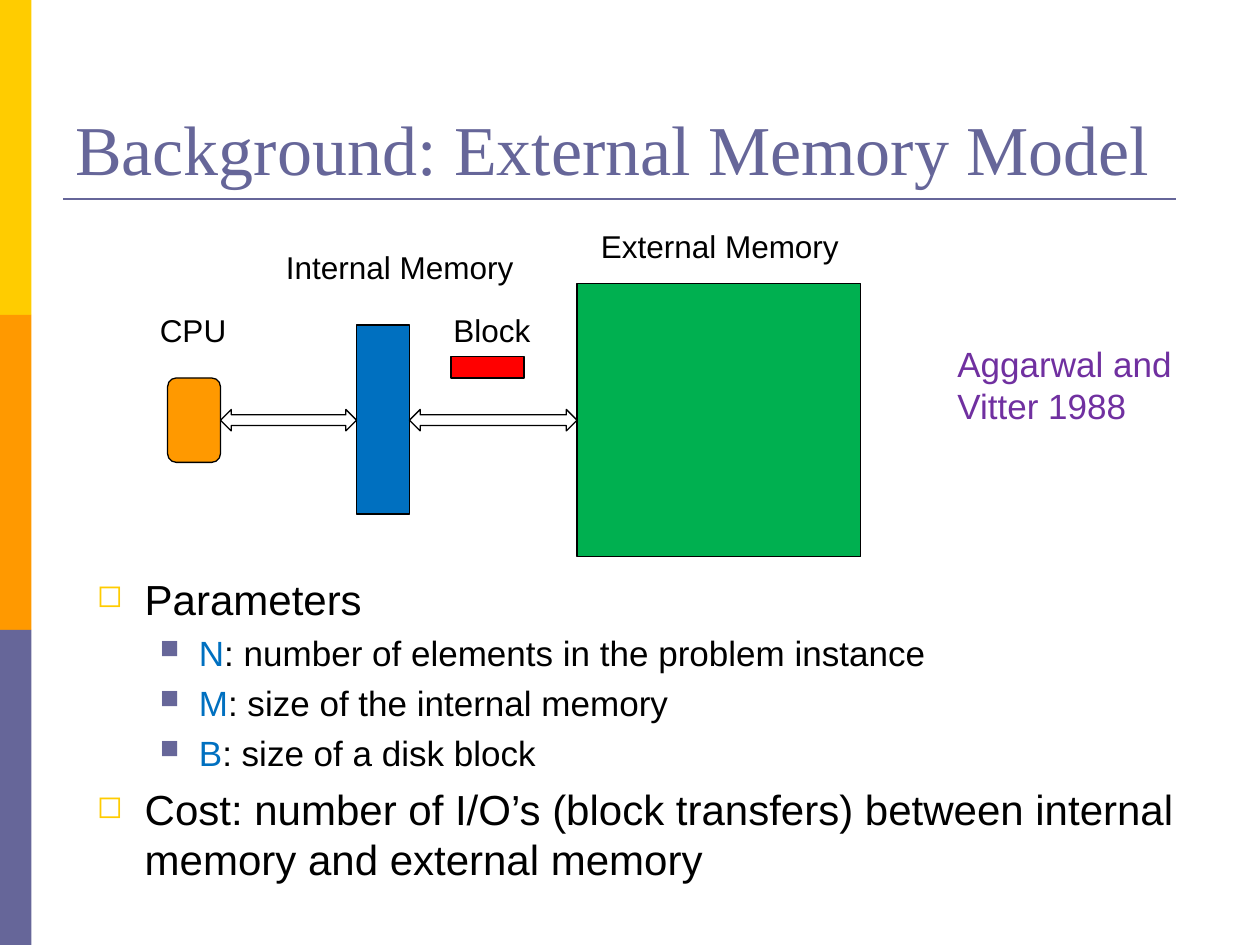
import lxml.etree
import pptx
import pptx.dml.color
import pptx.enum.shapes
import pptx.enum.text
import pptx.oxml.ns
import pptx.util

Inches = pptx.util.Inches
Pt = pptx.util.Pt
SHAPE = pptx.enum.shapes.MSO_SHAPE
ANCHOR = pptx.enum.text.MSO_ANCHOR

THEME = {
    "yellow": "FFCC00", "orange": "FF9900", "slate": "666699",
    "black": "000000", "blue": "0070C0", "green": "00B050",
    "red": "FF0000", "purple": "7030A0",
    "heading_font": "Times New Roman", "body_font": "Arial",
    "title": 40, "level_sizes": (24, 20), "citation": 20, "label": 18,
}

TITLE = "Background: External Memory Model"
SIDE_BANDS = ["yellow", "orange", "slate"]
CITATION = ["Aggarwal and", "Vitter 1988"]

# shape, colour, left, top, width, height
CPU = (SHAPE.ROUNDED_RECTANGLE, "orange", 1.33, 3, 0.42, 0.67)
INTERNAL = (SHAPE.RECTANGLE, "blue", 2.83, 2.58, 0.42, 1.5)
EXTERNAL = (SHAPE.RECTANGLE, "green", 4.58, 2.25, 2.25, 2.17)
BLOCK = (SHAPE.RECTANGLE, "red", 3.58, 2.83, 0.58, 0.17)
ARROW_TOP, ARROW_HEIGHT = 3.25, 0.17

# text, left, top, width
LABELS = [
    ("CPU", 1.17, 2.42, 0.73),
    ("Internal Memory", 2.17, 1.92, 2.03),
    ("Block", 3.5, 2.42, 0.82),
    ("External Memory", 4.67, 1.75, 2.11),
]

# level, symbol, text
BULLETS = [
    (0, "", "Parameters"),
    (1, "N", ": number of elements in the problem instance"),
    (1, "M", ": size of the internal memory"),
    (1, "B", ": size of a disk block"),
    (0, "", "Cost: number of I/O’s (block transfers) between internal "
            "memory and external memory"),
]
# bullet character, colour, left margin, hanging indent
BULLET_STYLES = [("◻", "yellow", 0.38, 0.38), ("■", "slate", 0.81, 0.31)]


def color(name):
    return pptx.dml.color.RGBColor.from_string(THEME[name])


def add_block(slide, kind, fill, left, top, width, height, outlined=True):
    shape = slide.shapes.add_shape(
        kind, Inches(left), Inches(top), Inches(width), Inches(height))
    shape.shadow.inherit = False
    if fill:
        shape.fill.solid()
        shape.fill.fore_color.rgb = color(fill)
    else:
        shape.fill.background()
    if outlined:
        shape.line.color.rgb = color("black")
        shape.line.width = Pt(0.75)
    else:
        shape.line.fill.background()


def add_text_frame(slide, left, top, width, height, wrap):
    box = slide.shapes.add_textbox(
        Inches(left), Inches(top), Inches(width), Inches(height))
    box.text_frame.word_wrap = wrap
    return box.text_frame


def style_font(font, size, font_color, name=THEME["body_font"]):
    font.size = Pt(size)
    font.name = name
    font.color.rgb = color(font_color)


def add_lines(slide, lines, left, top, width, height, size, font_color):
    frame = add_text_frame(slide, left, top, width, height, False)
    frame.auto_size = pptx.enum.text.MSO_AUTO_SIZE.SHAPE_TO_FIT_TEXT
    frame.text = "\n".join(lines)
    for paragraph in frame.paragraphs:
        style_font(paragraph.font, size, font_color)


def set_bullet(paragraph, character, bullet_color, margin, hanging):
    properties = paragraph._p.get_or_add_pPr()
    properties.set("marL", str(Inches(margin)))
    properties.set("indent", str(-Inches(hanging)))
    qn = pptx.oxml.ns.qn
    holder = lxml.etree.Element(qn("a:buClr"))
    lxml.etree.SubElement(holder, qn("a:srgbClr"), val=THEME[bullet_color])
    size = lxml.etree.Element(qn("a:buSzPct"), val="75000")
    symbol = lxml.etree.Element(qn("a:buChar"), char=character)
    # Bullet settings come after spacing and before the default run properties.
    position = len(properties.findall(qn("a:spcBef")))
    properties[position:position] = [holder, size, symbol]


def add_frame(slide):
    for index, band in enumerate(SIDE_BANDS):
        add_block(slide, SHAPE.RECTANGLE, band, 0, 2.5 * index, 0.25, 2.5,
                  outlined=False)
    rule = slide.shapes.add_connector(
        pptx.enum.shapes.MSO_CONNECTOR.STRAIGHT,
        Inches(0.5), Inches(1.58), Inches(9.33), Inches(1.58))
    rule.line.color.rgb = color("slate")
    rule.line.width = Pt(1.5)
    lxml.etree.SubElement(rule._element.spPr, pptx.oxml.ns.qn("a:effectLst"))
    frame = add_text_frame(slide, 0.5, 0.3, 9, 1.25, True)
    frame.vertical_anchor = ANCHOR.BOTTOM
    frame.text = TITLE
    style_font(frame.paragraphs[0].font, THEME["title"], "slate",
               THEME["heading_font"])


def add_diagram(slide):
    for block in (CPU, INTERNAL, EXTERNAL, BLOCK):
        add_block(slide, *block)
    for source, target in ((CPU, INTERNAL), (INTERNAL, EXTERNAL)):
        left = source[2] + source[4]
        add_block(slide, SHAPE.LEFT_RIGHT_ARROW, None, left, ARROW_TOP,
                  target[2] - left, ARROW_HEIGHT)
    for text, left, top, width in LABELS:
        add_lines(slide, [text], left, top, width, 0.4, THEME["label"], "black")
    add_lines(slide, CITATION, 7.5, 2.67, 2, 0.77, THEME["citation"], "purple")


def add_bullets(slide):
    frame = add_text_frame(slide, 0.67, 4.5, 8.92, 2.67, True)
    for index, (level, symbol, text) in enumerate(BULLETS):
        paragraph = frame.add_paragraph() if index else frame.paragraphs[0]
        size = THEME["level_sizes"][level]
        paragraph.level = level
        paragraph.space_before = Pt(0.23 * size)
        style_font(paragraph.font, size, "black")
        set_bullet(paragraph, *BULLET_STYLES[level])
        if symbol:
            run = paragraph.add_run()
            run.text = symbol
            run.font.color.rgb = color("blue")
        paragraph.add_run().text = text


def main():
    presentation = pptx.Presentation()
    presentation.slide_width = Inches(10)
    presentation.slide_height = Inches(7.5)
    slide = presentation.slides.add_slide(presentation.slide_layouts[6])
    add_frame(slide)
    add_bullets(slide)
    add_diagram(slide)
    presentation.save("out.pptx")


if __name__ == "__main__":
    main()
